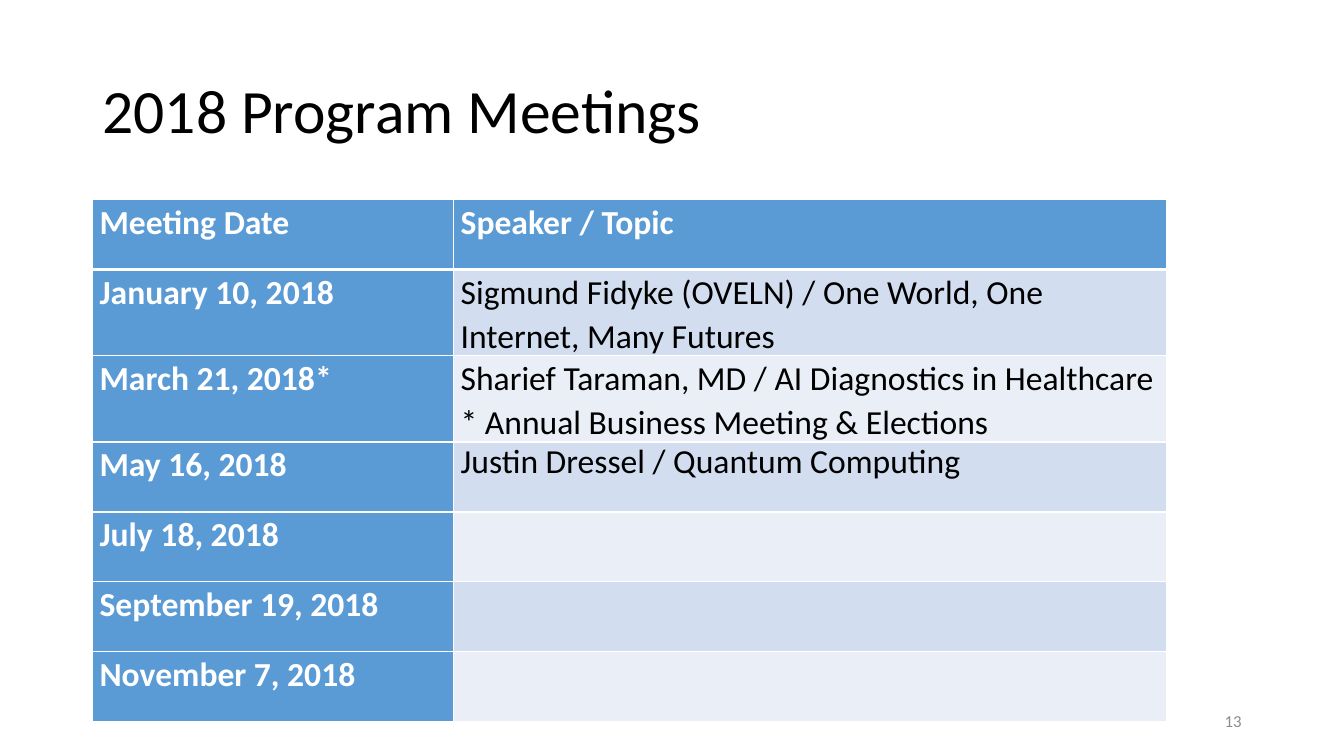
from lxml.etree import SubElement
from pptx import Presentation
from pptx.dml.color import RGBColor
from pptx.enum.text import MSO_ANCHOR as Anchor, PP_ALIGN as Align
from pptx.oxml.ns import qn
from pptx.util import Cm, Pt

WHITE = RGBColor(0xFF, 0xFF, 0xFF)
BLACK = RGBColor(0x00, 0x00, 0x00)
GRAY = RGBColor(0x8C, 0x8C, 0x8C)
BLUE = RGBColor(0x5B, 0x9B, 0xD5)
BANDS = RGBColor(0xD2, 0xDE, 0xEF), RGBColor(0xEA, 0xEF, 0xF7)

FONT = "Calibri"
LEFT = Cm(2.33)
HEAD = ("Meeting Date", "Speaker / Topic")
# Date, lines of the topic, line spacing of the topic
MEETINGS = [
    ("January 10, 2018",
     ["Sigmund Fidyke (OVELN) / One World, One Internet, Many Futures"], 1.07),
    ("March 21, 2018*",
     ["Sharief Taraman, MD / AI Diagnostics in Healthcare",
      "* Annual Business Meeting & Elections"], 1.07),
    ("May 16, 2018", ["Justin Dressel / Quantum Computing"], 1.0),
    ("July 18, 2018", [], 1.07),
    ("September 19, 2018", [], 1.07),
    ("November 7, 2018", [], 1.07),
]


def add_run(para, text, size, color, bold=False):
    run = para.add_run()
    run.text = text
    font = run.font
    font.name, font.size, font.bold = FONT, Pt(size), bold
    font.color.rgb = color


def add_title(slide, text):
    title = slide.shapes.title
    title.left, title.top = LEFT, Cm(1.01)
    title.width, title.height = Cm(29.21), Cm(3.68)
    frame = title.text_frame
    frame.vertical_anchor = Anchor.MIDDLE
    para = frame.paragraphs[0]
    para.alignment, para.line_spacing = Align.LEFT, 0.9
    add_run(para, text, 44, BLACK)


def add_number(slide, text):
    box = slide.shapes.add_textbox(Cm(23.92), Cm(17.65), Cm(7.62), Cm(1.01))
    frame = box.text_frame
    frame.word_wrap = True
    frame.vertical_anchor = Anchor.MIDDLE
    para = frame.paragraphs[0]
    para.alignment = Align.RIGHT
    add_run(para, text, 12, GRAY)


def set_edges(cell, heavy):
    """White cell borders, thicker where named in heavy."""
    props = cell._tc.get_or_add_tcPr()
    for side in "LRTB":
        width = Pt(3 if side in heavy else 1)
        line = SubElement(props, qn(f"a:ln{side}"), w=str(width))
        fill = SubElement(line, qn("a:solidFill"))
        SubElement(fill, qn("a:srgbClr"), val=str(WHITE))


def fill_cell(cell, lines, fill, color, bold, space=1.07, heavy=""):
    set_edges(cell, heavy)
    cell.fill.solid()
    cell.fill.fore_color.rgb = fill
    cell.margin_left = cell.margin_right = Cm(0.18)
    cell.margin_top = cell.margin_bottom = 0
    para = cell.text_frame.paragraphs[0]
    para.line_spacing = space
    for i, line in enumerate(lines):
        if i:
            para.add_line_break()
        add_run(para, line, 24, color, bold)


def add_schedule(slide):
    count = len(MEETINGS) + 1
    high = Cm(1.76)
    table = slide.shapes.add_table(
        count, 2, LEFT, Cm(5.03), Cm(27.08), high * count).table
    table.columns[0].width, table.columns[1].width = Cm(9.1), Cm(17.98)
    for row in table.rows:
        row.height = high

    # Header row
    for col, text in enumerate(HEAD):
        fill_cell(table.cell(0, col), [text], BLUE, WHITE, True, heavy="B")

    # Meeting rows, with banded topics
    for i, (date, topic, space) in enumerate(MEETINGS):
        edge = "" if i else "T"
        fill_cell(table.cell(i + 1, 0), [date], BLUE, WHITE, True, heavy=edge)
        fill_cell(table.cell(i + 1, 1), topic, BANDS[i % 2], BLACK, False,
                  space, edge)


def main():
    deck = Presentation()
    deck.slide_width, deck.slide_height = Cm(33.87), Cm(19.05)
    slide = deck.slides.add_slide(deck.slide_layouts.get_by_name("Title Only"))
    add_title(slide, "2018 Program Meetings")
    add_number(slide, "13")
    add_schedule(slide)
    deck.save("out.pptx")


if __name__ == "__main__":
    main()
